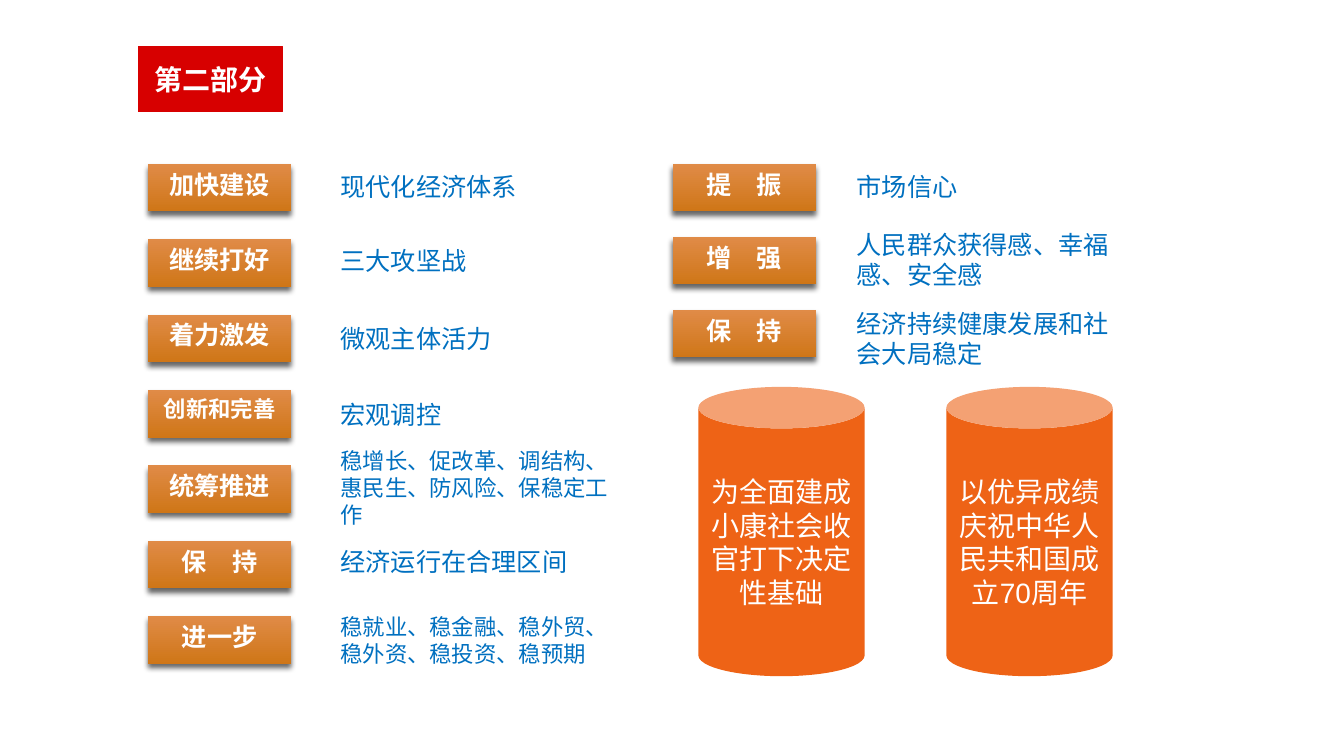
"""Build the slide of policy goals for part two."""
from dataclasses import dataclass

import pptx
import pptx.dml.color
import pptx.enum.shapes
import pptx.enum.text
import pptx.oxml
import pptx.oxml.ns
import pptx.util
from lxml import etree

Cm = pptx.util.Cm
Pt = pptx.util.Pt
RGBColor = pptx.dml.color.RGBColor
MSO_SHAPE = pptx.enum.shapes.MSO_SHAPE
MSO_ANCHOR = pptx.enum.text.MSO_ANCHOR
PP_ALIGN = pptx.enum.text.PP_ALIGN

RED = RGBColor(0xD7, 0x00, 0x00)
WHITE = RGBColor(0xFF, 0xFF, 0xFF)
BLUE = RGBColor(0x00, 0x70, 0xC0)
ORANGE = RGBColor(0xEE, 0x63, 0x16)
TAG_TOP = RGBColor(0xE0, 0x8B, 0x47)
TAG_BOTTOM = RGBColor(0xCF, 0x76, 0x17)

CJK_FONT = "Noto Sans CJK SC"
TAG_FONT = "Quicksand"
CAN_FONT = "Arial"

PILL_GEOMETRY = (
    '<a:prstGeom %s prst="roundRect"><a:avLst>'
    '<a:gd name="adj" fmla="val 50000"/></a:avLst></a:prstGeom>'
)
TAG_SHADOW = (
    '<a:outerShdw %s blurRad="50800" dist="38100" dir="5400000" rotWithShape="0">'
    '<a:srgbClr val="000000"><a:alpha val="60000"/></a:srgbClr></a:outerShdw>'
)


@dataclass
class Goal:
    tag: str
    note: str
    note_top: float
    note_height: float = 1.02
    tag_size: int = 18
    note_size: int = 18


@dataclass
class GoalColumn:
    tag_left: float
    note_left: float
    pitch: float
    goals: list[Goal]


@dataclass
class Can:
    left: float
    text: str


FIRST_TAG_TOP = 4.13
COLUMNS = [
    GoalColumn(3.73, 8.33, 1.9, [
        Goal("加快建设", "现代化经济体系", 4.19),
        Goal("继续打好", "三大攻坚战", 6.05),
        Goal("着力激发", "微观主体活力", 8.03),
        Goal("创新和完善", "宏观调控", 9.93, tag_size=16),
        Goal("统筹推进", "稳增长、促改革、调结构、惠民生、防风险、保稳定工作",
             11.15, 2.31, note_size=16),
        Goal("保　持", "经济运行在合理区间", 13.64),
        Goal("进一步", "稳就业、稳金融、稳外贸、稳外资、稳投资、稳预期",
             15.32, 1.63, note_size=16),
    ]),
    GoalColumn(16.95, 21.34, 1.84, [
        Goal("提　振", "市场信心", 4.19),
        Goal("增　强", "人民群众获得感、幸福感、安全感", 5.66, 1.8),
        Goal("保　持", "经济持续健康发展和社会大局稳定", 7.65, 1.8),
    ]),
]
CANS = [
    Can(17.6, "为全面建成小康社会收官打下决定性基础"),
    Can(23.85, "以优异成绩庆祝中华人民共和国成立70周年"),
]


def xml_element(template: str) -> etree._Element:
    return pptx.oxml.parse_xml(template % pptx.oxml.ns.nsdecls("a"))


def write(sp, text: str, font: str, size: int, color: RGBColor,
          bold: bool = False, align=PP_ALIGN.CENTER, anchor=MSO_ANCHOR.MIDDLE) -> None:
    tf = sp.text_frame
    tf.word_wrap = True
    tf.vertical_anchor = anchor
    p = tf.paragraphs[0]
    p.alignment = align
    p.add_run().text = text
    p.font.name = font
    p.font.size = Pt(size)
    p.font.bold = bold
    p.font.color.rgb = color


def draw_title(s, text: str) -> None:
    sp = s.shapes.title
    sp.left, sp.top, sp.width, sp.height = Cm(3.48), Cm(1.16), Cm(3.64), Cm(1.66)
    sp.element.spPr.append(xml_element(PILL_GEOMETRY))
    sp.fill.solid()
    sp.fill.fore_color.rgb = RED
    sp.line.color.rgb = RED
    sp.line.width = Pt(0.75)
    tf = sp.text_frame
    tf.auto_size = pptx.enum.text.MSO_AUTO_SIZE.NONE
    tf.margin_left = tf.margin_right = tf.margin_top = tf.margin_bottom = 0
    write(sp, text, CJK_FONT, 20, WHITE, bold=True)


def draw_tag(s, goal: Goal, left: float, top: float) -> None:
    sp = s.shapes.add_shape(MSO_SHAPE.RECTANGLE, Cm(left), Cm(top), Cm(3.61), Cm(1.2))
    sp.fill.gradient()
    sp.fill.gradient_angle = 270
    for stop, color in zip(sp.fill.gradient_stops, (TAG_TOP, TAG_BOTTOM)):
        stop.color.rgb = color
    sp.line.fill.background()
    sp.shadow.inherit = False
    effects = sp.element.spPr.find(pptx.oxml.ns.qn("a:effectLst"))
    effects.append(xml_element(TAG_SHADOW))
    write(sp, goal.tag, TAG_FONT, goal.tag_size, WHITE, bold=True, anchor=MSO_ANCHOR.TOP)


def draw_note(s, goal: Goal, left: float) -> None:
    sp = s.shapes.add_textbox(Cm(left), Cm(goal.note_top), Cm(7.39), Cm(goal.note_height))
    write(sp, goal.note, CJK_FONT, goal.note_size, BLUE,
          align=PP_ALIGN.LEFT, anchor=MSO_ANCHOR.TOP)


def draw_can(s, can: Can) -> None:
    sp = s.shapes.add_shape(MSO_SHAPE.CAN, Cm(can.left), Cm(9.75), Cm(4.19), Cm(7.29))
    sp.fill.solid()
    sp.fill.fore_color.rgb = ORANGE
    sp.line.fill.background()
    sp.shadow.inherit = False
    write(sp, can.text, CAN_FONT, 20, WHITE)


def main() -> None:
    prs = pptx.Presentation()
    prs.slide_width, prs.slide_height = Cm(33.87), Cm(19.05)
    s = prs.slides.add_slide(prs.slide_layouts.get_by_name("Title Only"))
    draw_title(s, "第二部分")
    for column in COLUMNS:
        for row, goal in enumerate(column.goals):
            draw_tag(s, goal, column.tag_left, FIRST_TAG_TOP + row * column.pitch)
            draw_note(s, goal, column.note_left)
    for can in CANS:
        draw_can(s, can)
    prs.save("out.pptx")


if __name__ == "__main__":
    main()
